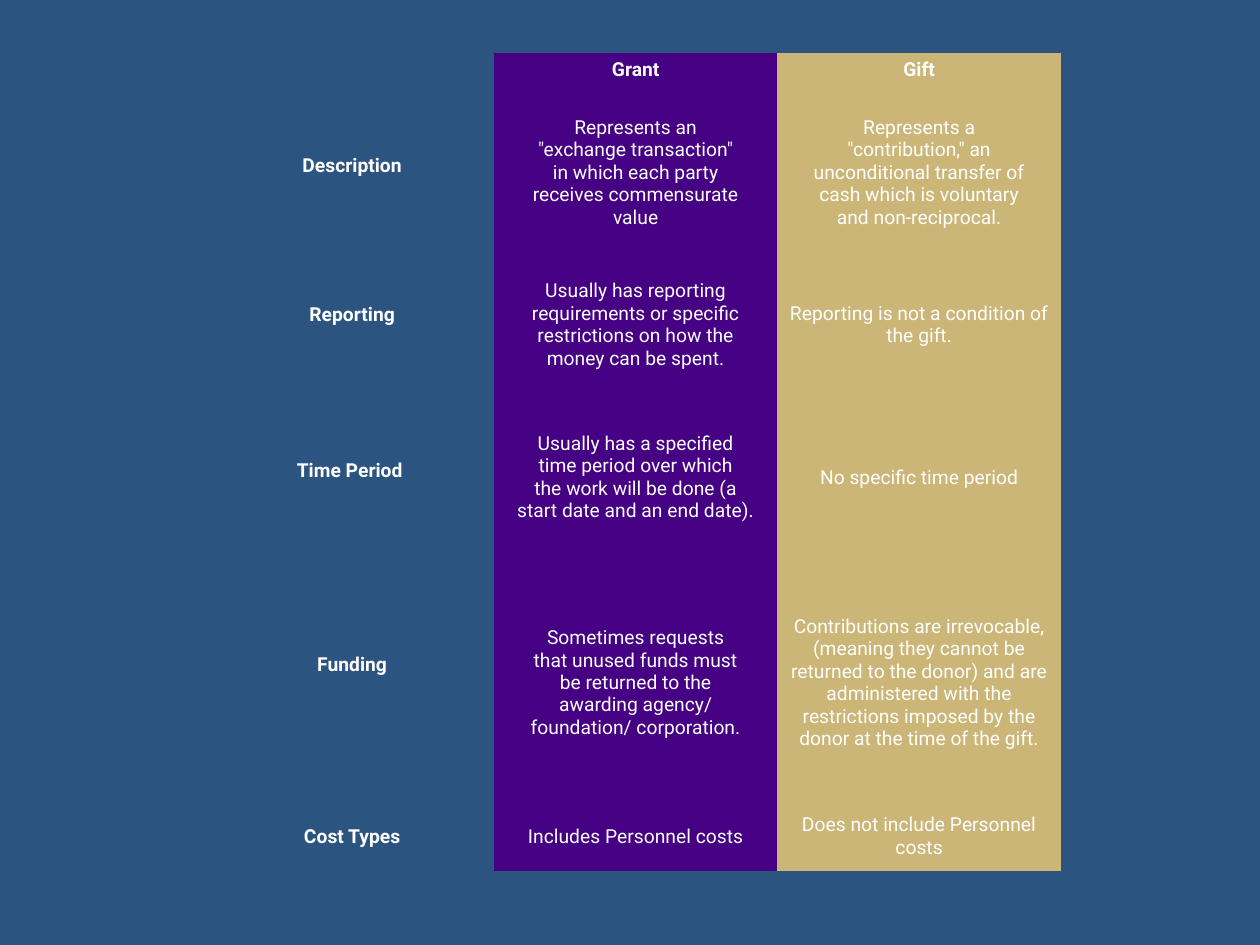
from copy import deepcopy

from lxml.etree import SubElement
from pptx import Presentation
from pptx.dml.color import RGBColor
from pptx.enum.text import MSO_ANCHOR, PP_ALIGN
from pptx.oxml.ns import qn
from pptx.util import Inches, Pt

COLORS = {"background": "2B5481", "grant": "450084", "gift": "CBB677", "text": "FFFFFF"}
NO_STYLE_NO_GRID = "{2D5ABB26-0587-4C30-8999-92F81FD0307C}"
LINE_HEIGHT = 0.18

# Row height, lines of space above the label, then label, grant and gift texts
ROWS = [
    (0.27, 0, "", "Grant", "Gift"),
    (1.36, 3, "Description",
     "Represents an\n\"exchange transaction\"\nin which each party\nreceives commensurate\nvalue",
     "Represents a\n\"contribution,\" an\nunconditional transfer of\ncash which is voluntary\nand non-reciprocal."),
    (1.06, 2, "Reporting",
     "Usually has reporting\nrequirements or specific\nrestrictions on how the\nmoney can be spent.",
     "Reporting is not a condition of the gift."),
    (1.36, 3, "Time Period ",
     "Usually has a specified\ntime period over which\nthe work will be done (a\nstart date and an end date).",
     "No specific time period"),
    (1.9, 4, "Funding",
     "Sometimes requests\nthat unused funds must\nbe returned to the\nawarding agency/\nfoundation/ corporation.",
     "Contributions are irrevocable, (meaning they cannot be returned to the donor) "
     "and are administered with the restrictions imposed by the donor at the time of the gift."),
    (0.54, 1, "Cost Types", "Includes Personnel costs", "Does not include Personnel\ncosts"),
]


def write_cell(cell, text, bold):
    para = cell.text_frame.paragraphs[0]
    para.alignment = PP_ALIGN.CENTER
    if not text:
        # An empty cell needs its own text size, or the row grows
        SubElement(para._p, qn("a:endParaRPr"), sz="1100")
        return
    for index, line in enumerate(text.split("\n")):
        if index:
            para.add_line_break()
            # The break takes the format of the line before it
            para._p[-1].append(deepcopy(span._r.rPr))
        span = para.add_run()
        span.text = line
        span.font.name = "Roboto"
        span.font.size = Pt(11)
        span.font.bold = bold
        span.font.color.rgb = RGBColor.from_string(COLORS["text"])


deck = Presentation()
deck.slide_width = Inches(10)
deck.slide_height = Inches(7.5)
page = deck.slides.add_slide(deck.slide_layouts[6])
page.background.fill.solid()
page.background.fill.fore_color.rgb = RGBColor.from_string(COLORS["background"])

frame = page.shapes.add_table(len(ROWS), 3, Inches(1.67), Inches(0.42), Inches(6.75), Inches(6.5))
table = frame.table
table.first_row = False
table.horz_banding = False
table._tbl.tblPr.find(qn("a:tableStyleId")).text = NO_STYLE_NO_GRID
for column in table.columns:
    column.width = Inches(2.25)

for row_index, (height, lines_above, *texts) in enumerate(ROWS):
    table.rows[row_index].height = Inches(height)
    for column_index, (text, fill) in enumerate(zip(texts, (None, "grant", "gift"))):
        cell = table.cell(row_index, column_index)
        cell.margin_left = cell.margin_right = cell.margin_top = cell.margin_bottom = 0
        if fill:
            cell.vertical_anchor = MSO_ANCHOR.MIDDLE
            cell.fill.solid()
            cell.fill.fore_color.rgb = RGBColor.from_string(COLORS[fill])
        else:
            cell.vertical_anchor = MSO_ANCHOR.TOP
            cell.margin_top = Inches(lines_above * LINE_HEIGHT)
            cell.fill.background()
        write_cell(cell, text, bold=row_index == 0 or column_index == 0)

deck.save("out.pptx")
